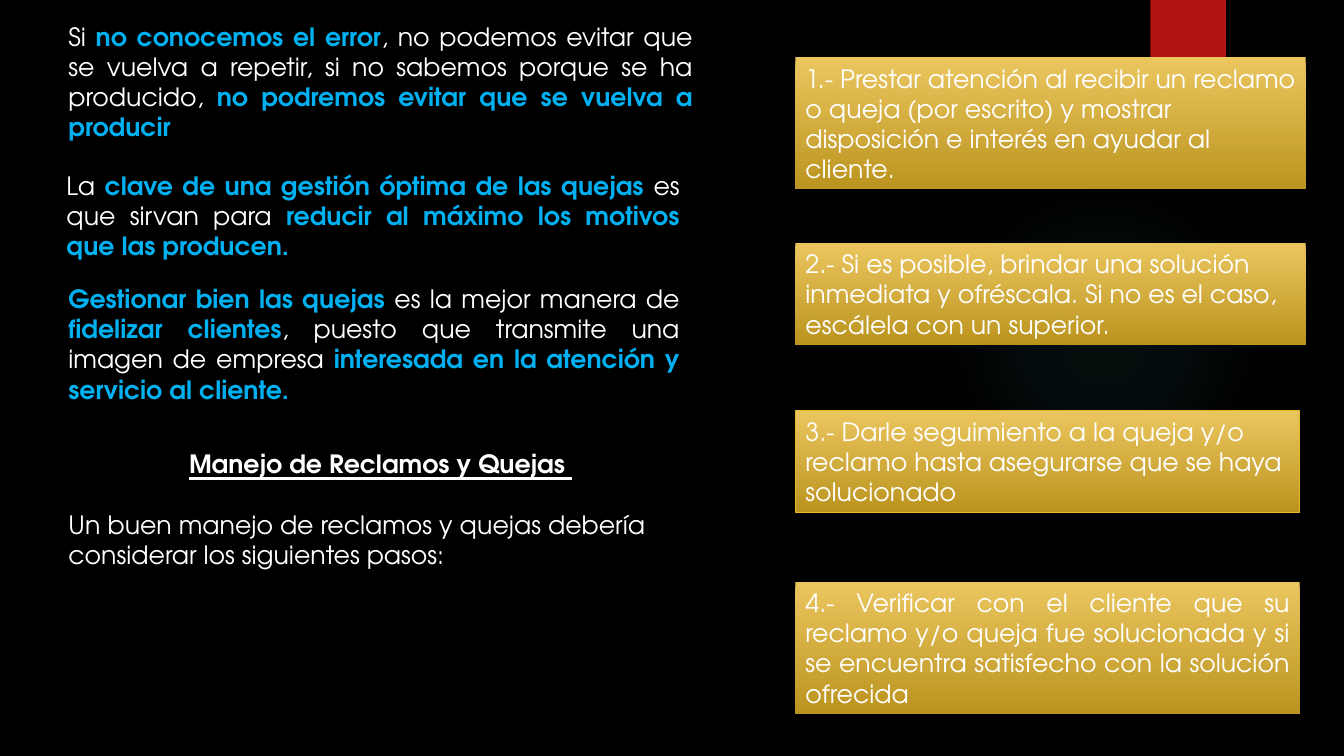
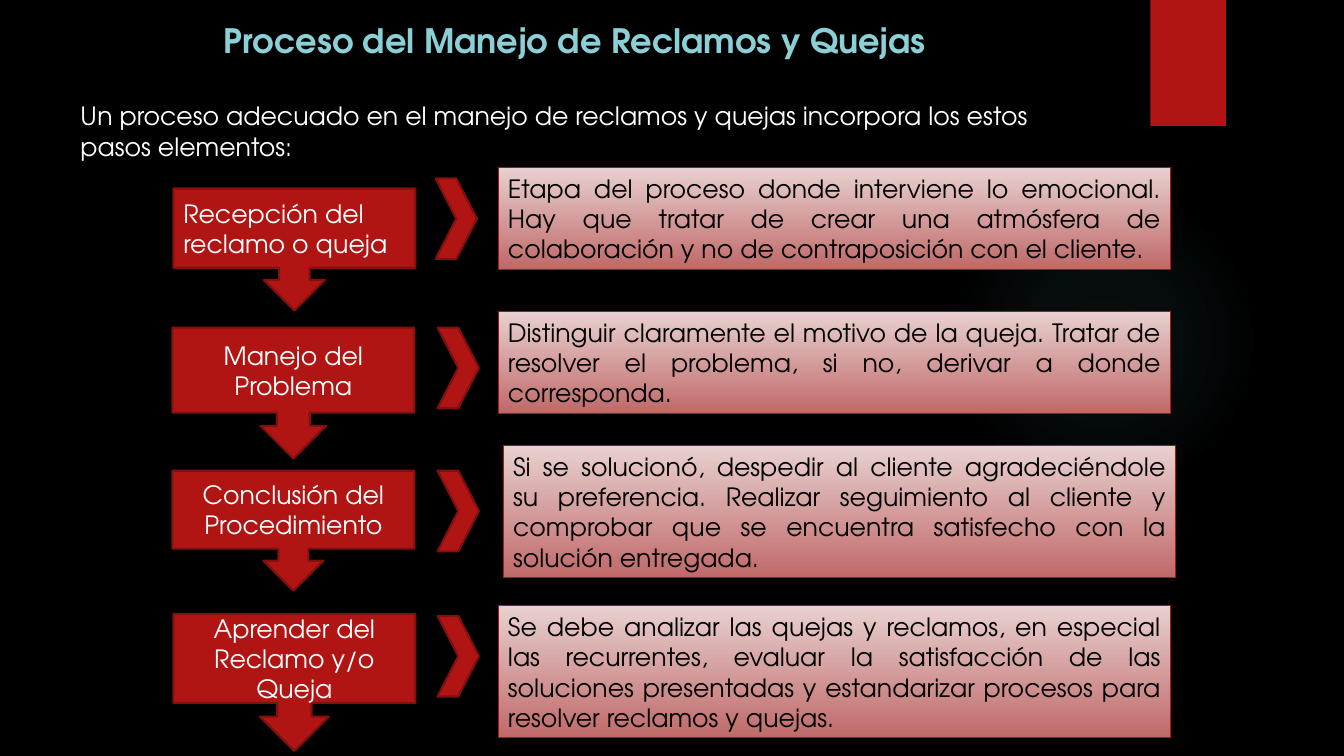
"""Build two slides on handling customer claims and complaints."""
from dataclasses import dataclass
from typing import Any, Optional

import pptx
import pptx.dml.color
import pptx.enum.shapes
import pptx.enum.text
import pptx.oxml
import pptx.oxml.ns
import pptx.util

Inches = pptx.util.Inches
Pt = pptx.util.Pt
Shapes = pptx.enum.shapes.MSO_SHAPE
Align = pptx.enum.text.PP_ALIGN
Anchor = pptx.enum.text.MSO_ANCHOR

FONT = "TeX Gyre Adventor"
BLACK, WHITE = "000000", "FFFFFF"
RED, DARK_RED = "B01513", "82100E"
BLUE, AQUA, TEAL = "00B0F0", "8AD0D6", "50B9C1"
GOLD = ("EBC65F", "BB941F")
GOLD_EDGE = "E6B729"
PINK = ("E8D1D0", "C06969")
THREE_LINES, FOUR_LINES = 1.01, 1.31


@dataclass(frozen=True)
class Box:
    left: float
    top: float
    width: float
    height: float


@dataclass(frozen=True)
class Tip:
    text: str
    box: Box
    edge: Optional[str] = None
    align: Any = Align.LEFT


@dataclass(frozen=True)
class Stage:
    name: str
    callout: Box
    chevron: tuple[float, float]
    detail: str
    detail_box: Box
    align: Any = Align.CENTER


MESSAGES = [
    ("Si *no conocemos el error*, no podemos evitar que se vuelva a repetir, si no sabemos "
     "porque se ha producido, *no podremos evitar que se vuelva a producir*",
     Box(0.58, 0.16, 6.39, FOUR_LINES)),
    ("La *clave de una gestión óptima de las quejas *es que sirvan para "
     "*reducir al máximo los motivos que las producen.*",
     Box(0.56, 1.64, 6.28, THREE_LINES)),
    ("*Gestionar bien las quejas *es la mejor manera de *fidelizar clientes*, puesto que "
     "transmite una imagen de empresa *interesada en la atención y servicio al cliente.*",
     Box(0.58, 2.76, 6.26, FOUR_LINES)),
]

TIPS = [
    Tip("1.- Prestar atención al recibir un reclamo o queja (por escrito) y mostrar "
        "disposición e interés en ayudar al cliente.", Box(7.89, 0.57, 5.06, FOUR_LINES)),
    Tip("2.- Si es posible, brindar una solución inmediata y ofréscala. Si no es el caso, "
        "escálela con un superior.", Box(7.89, 2.41, 5.06, THREE_LINES)),
    Tip("3.- Darle seguimiento a la queja y/o reclamo hasta asegurarse que se haya solucionado",
        Box(7.89, 4.07, 5, THREE_LINES), edge=GOLD_EDGE),
    Tip("4.- Verificar con el cliente que su reclamo y/o queja fue solucionada y si se "
        "encuentra satisfecho con la solución ofrecida",
        Box(7.89, 5.77, 5, FOUR_LINES), align=Align.JUSTIFY),
]

STAGES = [
    Stage("Recepción del reclamo o queja", Box(1.72, 1.87, 2.4, 1.21), (4.32, 1.77),
          "Etapa del proceso donde interviene lo emocional. Hay que tratar de crear una "
          "atmósfera de colaboración y no de contraposición con el cliente.",
          Box(4.94, 1.66, 6.67, THREE_LINES), Align.LEFT),
    Stage("Manejo del Problema", Box(1.71, 3.25, 2.4, 1.3), (4.34, 3.25),
          "Distinguir claramente el motivo de la queja. Tratar de resolver el problema, "
          "si no, derivar a donde corresponda.",
          Box(4.94, 3.09, 6.67, THREE_LINES)),
    Stage("Conclusión del Procedimiento", Box(1.71, 4.67, 2.4, 1.19), (4.34, 4.67),
          "Si se solucionó, despedir al cliente agradeciéndole su preferencia. Realizar "
          "seguimiento al cliente y comprobar que se encuentra satisfecho con la solución "
          "entregada.",
          Box(4.99, 4.42, 6.67, FOUR_LINES)),
    Stage("Aprender del Reclamo y/o Queja", Box(1.72, 6.09, 2.4, 1.36), (4.34, 6.11),
          "Se debe analizar las quejas y reclamos, en especial las recurrentes, evaluar la "
          "satisfacción de las soluciones presentadas y estandarizar procesos para resolver "
          "reclamos y quejas.",
          Box(4.94, 6.01, 6.67, FOUR_LINES)),
]


def rgb(value: str) -> pptx.dml.color.RGBColor:
    return pptx.dml.color.RGBColor.from_string(value)


def place(box: Box) -> tuple:
    return Inches(box.left), Inches(box.top), Inches(box.width), Inches(box.height)


def write(frame: Any, text: str, *, size: float = 18, color: str = WHITE, bold: bool = False,
          underline: bool = False, align: Any = Align.LEFT, gap: float = 0) -> None:
    frame.word_wrap = True
    paragraph = frame.paragraphs[0]
    if paragraph.runs:
        paragraph = frame.add_paragraph()
        paragraph.space_before = Pt(gap)
    paragraph.alignment = align
    for index, part in enumerate(text.split("*")):
        if not part:
            continue
        highlighted = index % 2 == 1
        run = paragraph.add_run()
        run.text = part
        run.font.name = FONT
        run.font.size = Pt(size)
        run.font.bold = bold or highlighted
        run.font.underline = underline
        run.font.color.rgb = rgb(BLUE if highlighted else color)


def add_text_frame(slide: Any, box: Box) -> Any:
    frame = slide.shapes.add_textbox(*place(box)).text_frame
    frame.word_wrap = True
    return frame


def add_figure(slide: Any, kind: Any, box: Box, fill: Any, edge: Optional[str] = None,
               edge_width: float = 0.75) -> Any:
    figure = slide.shapes.add_shape(kind, *place(box))
    figure.shadow.inherit = False
    if isinstance(fill, str):
        figure.fill.solid()
        figure.fill.fore_color.rgb = rgb(fill)
    else:
        figure.fill.gradient()
        figure.fill.gradient_angle = 270
        for stop, color, position in zip(figure.fill.gradient_stops, fill, (0, 1)):
            stop.color.rgb = rgb(color)
            stop.position = position
    if edge:
        figure.line.color.rgb = rgb(edge)
        figure.line.width = Pt(edge_width)
    else:
        figure.line.fill.background()
    figure.text_frame.vertical_anchor = Anchor.MIDDLE
    return figure


def add_glow(slide: Any) -> None:
    glow = add_figure(slide, Shapes.OVAL, Box(9.41, 1.83, 3.08, 3.08), (TEAL, TEAL))
    stops = "".join(
        f'<a:gs pos="{position}000"><a:srgbClr val="{TEAL}">'
        f'<a:alpha val="{alpha}000"/></a:srgbClr></a:gs>'
        for position, alpha in ((0, 7), (36, 6), (69, 0)))
    radial = pptx.oxml.parse_xml(
        f'<a:gradFill {pptx.oxml.ns.nsdecls("a")}><a:gsLst>{stops}</a:gsLst>'
        '<a:path path="circle"><a:fillToRect l="50000" t="50000" r="50000" b="50000"/>'
        '</a:path></a:gradFill>')
    properties = glow._element.spPr
    properties.replace(properties.find(pptx.oxml.ns.qn("a:gradFill")), radial)


def add_themed_slide(deck: Any) -> Any:
    slide = deck.slides.add_slide(deck.slide_layouts[6])
    slide.background.fill.solid()
    slide.background.fill.fore_color.rgb = rgb(BLACK)
    add_glow(slide)
    add_figure(slide, Shapes.RECTANGLE, Box(11.41, 0, 0.75, 1.25), RED)
    return slide


def add_tip(slide: Any, tip: Tip) -> None:
    card = add_figure(slide, Shapes.RECTANGLE, tip.box, GOLD, tip.edge)
    write(card.text_frame, tip.text, align=tip.align)


def add_stage(slide: Any, stage: Stage) -> None:
    callout = add_figure(slide, Shapes.DOWN_ARROW_CALLOUT, stage.callout, RED, DARK_RED, 1.5)
    write(callout.text_frame, stage.name, align=stage.align)
    add_figure(slide, Shapes.CHEVRON, Box(*stage.chevron, 0.41, 0.8), RED, DARK_RED, 1.5)
    detail = add_figure(slide, Shapes.RECTANGLE, stage.detail_box, PINK, RED)
    write(detail.text_frame, stage.detail, color=BLACK, align=Align.JUSTIFY)


def build_tips_slide(deck: Any) -> None:
    slide = add_themed_slide(deck)
    for message, box in MESSAGES:
        write(add_text_frame(slide, box), message, align=Align.JUSTIFY)
    handling = add_text_frame(slide, Box(0.58, 4.4, 6.39, FOUR_LINES))
    write(handling, "Manejo de Reclamos y Quejas ", bold=True, underline=True,
          align=Align.CENTER)
    write(handling, "Un buen manejo de reclamos y quejas debería considerar los siguientes "
          "pasos:", gap=21.6)
    for tip in TIPS:
        add_tip(slide, tip)


def build_process_slide(deck: Any) -> None:
    slide = add_themed_slide(deck)
    heading = add_text_frame(slide, Box(0.7, 0.15, 10, 1.51))
    write(heading, "Proceso del Manejo de Reclamos y Quejas", size=24, color=AQUA, bold=True,
          align=Align.CENTER)
    write(heading, "Un proceso adecuado en el manejo de reclamos y quejas incorpora los estos "
          "pasos elementos:", gap=28.8)
    for stage in STAGES:
        add_stage(slide, stage)


def main() -> None:
    deck = pptx.Presentation()
    deck.slide_width, deck.slide_height = Inches(13.33), Inches(7.5)
    build_tips_slide(deck)
    build_process_slide(deck)
    deck.save("out.pptx")


if __name__ == "__main__":
    main()
